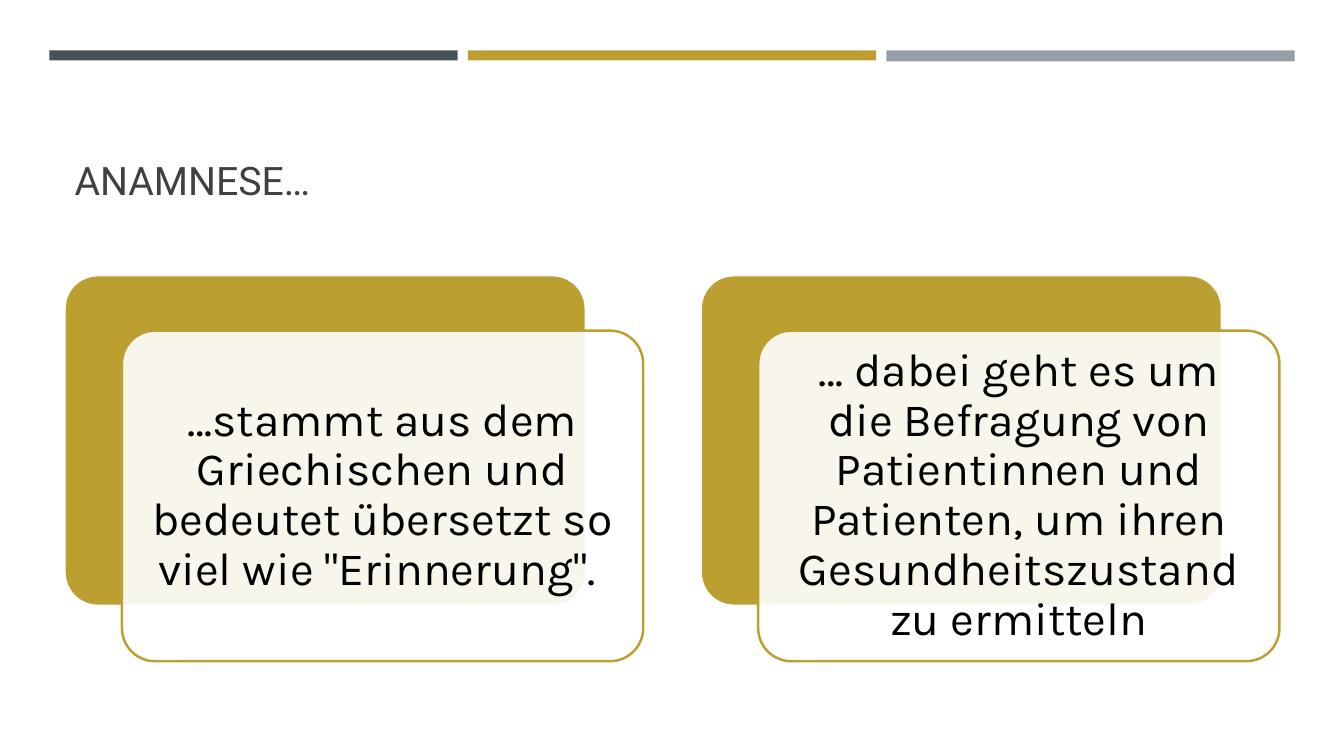
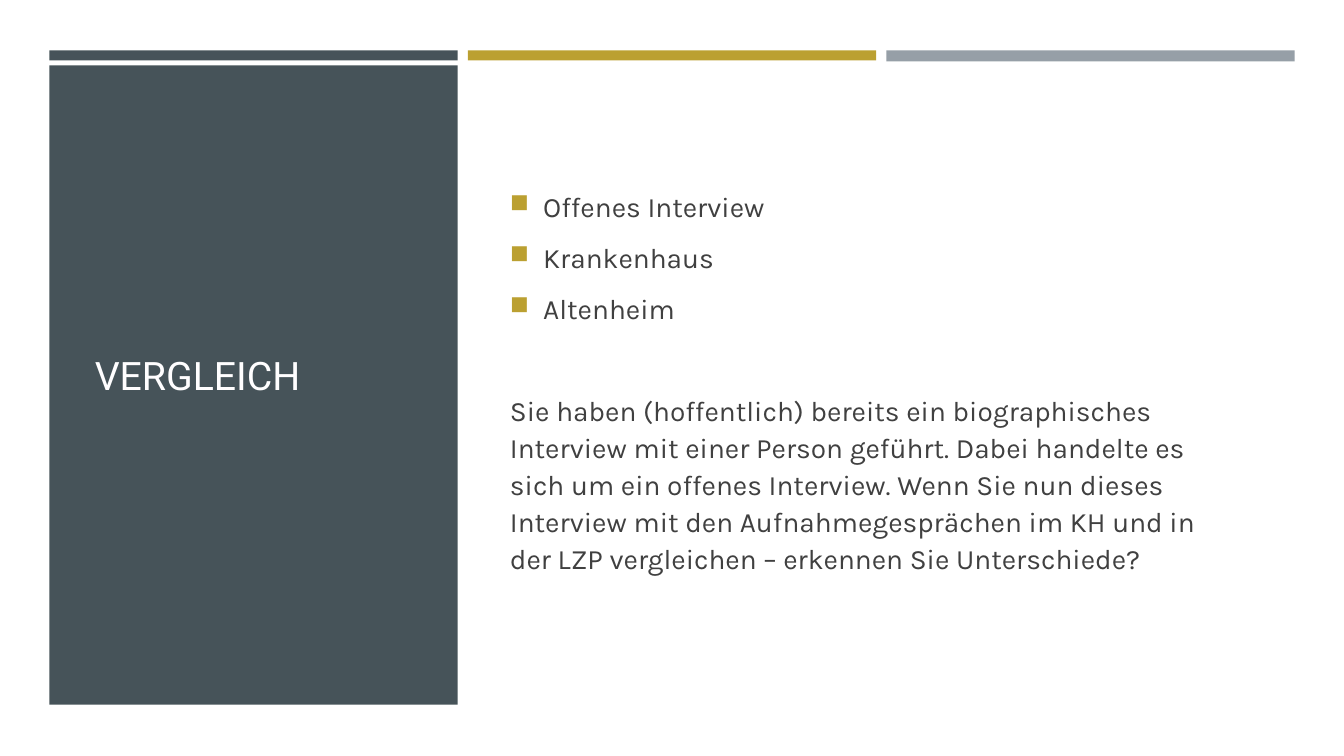
from dataclasses import dataclass

from lxml import etree
from pptx import Presentation
from pptx.dml.color import RGBColor
from pptx.enum.shapes import MSO_SHAPE
from pptx.enum.text import MSO_ANCHOR, MSO_AUTO_SIZE, PP_ALIGN
from pptx.oxml.ns import qn
from pptx.presentation import Presentation as Deck
from pptx.shapes.autoshape import Shape
from pptx.slide import Slide
from pptx.text.text import TextFrame
from pptx.util import Inches, Pt

RECT, ROUNDED = MSO_SHAPE.RECTANGLE, MSO_SHAPE.ROUNDED_RECTANGLE
MIDDLE, BOTTOM = MSO_ANCHOR.MIDDLE, MSO_ANCHOR.BOTTOM
LEFT, CENTER = PP_ALIGN.LEFT, PP_ALIGN.CENTER
NO_AUTOFIT = MSO_AUTO_SIZE.NONE

SLATE, GOLD, GRAY = "465359", "BBA031", "969FA7"
WHITE, OFF_WHITE, BLACK, INK = "FFFFFF", "FFFEFF", "000000", "404040"
HEADING_FONT, BODY_FONT = "Roboto", "Karla"
MARGIN, BAND_TOP, BAND_WIDTH, BAND_PITCH = 0.49, 0.5, 4.05, 4.15
CARD_PITCH = 6.31
TITLE_ONLY = 5


@dataclass(frozen=True)
class Box:
    left: float
    top: float
    width: float
    height: float

    def shifted(self, right: float, down: float = 0) -> "Box":
        return Box(self.left + right, self.top + down, self.width, self.height)

    def lengths(self) -> tuple[Inches, Inches, Inches, Inches]:
        return (Inches(self.left), Inches(self.top),
                Inches(self.width), Inches(self.height))


@dataclass(frozen=True)
class Band:
    color: str
    height: float


BANDS = (Band(SLATE, 0.1), Band(GOLD, 0.1), Band(GRAY, 0.11))
CARD_BACK = Box(0.64, 2.73, 5.17, 3.28)
CARD_TEXTS = (
    "…stammt aus dem Griechischen und bedeutet übersetzt so viel wie \"Erinnerung\". ",
    "… dabei geht es um die Befragung von Patientinnen und Patienten, "
    "um ihren Gesundheitszustand zu ermitteln",
)
SETTINGS = ("Offenes Interview", "Krankenhaus", "Altenheim")
QUESTION = (
    "Sie haben (hoffentlich) bereits ein biographisches Interview mit einer Person "
    "geführt. Dabei handelte es sich um ein offenes Interview. Wenn Sie nun dieses "
    "Interview mit den Aufnahmegesprächen im KH und in der LZP vergleichen – "
    "erkennen Sie Unterschiede?"
)


def rgb(color: str) -> RGBColor:
    return RGBColor.from_string(color)


def add_block(slide: Slide, box: Box, fill: str, *, kind: MSO_SHAPE = RECT,
              line: str | None = None, opacity: int = 100) -> Shape:
    block = slide.shapes.add_shape(kind, *box.lengths())
    block.shadow.inherit = False
    block.fill.solid()
    block.fill.fore_color.rgb = rgb(fill)
    if opacity < 100:
        solid = block.element.spPr.find(qn("a:solidFill"))
        etree.SubElement(solid[0], qn("a:alpha"), val=str(opacity * 1000))
    if line:
        block.line.color.rgb = rgb(line)
        block.line.width = Pt(1.75)
    else:
        block.line.fill.background()
    if kind == ROUNDED:
        block.adjustments[0] = 0.1
    return block


def write(frame: TextFrame, text: str, *, size: float, font: str, color: str,
          align: PP_ALIGN = LEFT, spacing: float = 1, before: float = 0,
          after: float = 0, bullet: bool = False) -> None:
    first = frame.paragraphs[0]
    paragraph = frame.add_paragraph() if first.runs else first
    paragraph.alignment = align
    paragraph.line_spacing = spacing
    paragraph.space_before, paragraph.space_after = Pt(before), Pt(after)
    run = paragraph.add_run()
    run.text = text
    run.font.size, run.font.name = Pt(size), font
    run.font.color.rgb = rgb(color)
    if bullet:
        properties = paragraph.element.get_or_add_pPr() if hasattr(
            paragraph, "element") else paragraph._p.get_or_add_pPr()
        properties.set("marL", str(Inches(0.33)))
        properties.set("indent", str(Inches(-0.33)))
        tint = etree.SubElement(properties, qn("a:buClr"))
        etree.SubElement(tint, qn("a:srgbClr"), val=GOLD)
        etree.SubElement(properties, qn("a:buSzPct"), val="92000")
        etree.SubElement(properties, qn("a:buChar"), char="■")


def prepare_frame(frame: TextFrame, anchor: MSO_ANCHOR) -> TextFrame:
    frame.word_wrap = True
    frame.auto_size = NO_AUTOFIT
    frame.vertical_anchor = anchor
    return frame


def set_title(slide: Slide, text: str, box: Box, color: str,
              anchor: MSO_ANCHOR) -> None:
    title = slide.shapes.title
    title.left, title.top, title.width, title.height = box.lengths()
    write(prepare_frame(title.text_frame, anchor), text, size=28,
          font=HEADING_FONT, color=color)
    slide.shapes.element.append(title.element)


def add_banded_slide(deck: Deck) -> Slide:
    slide = deck.slides.add_slide(deck.slide_layouts[TITLE_ONLY])
    for index, band in enumerate(BANDS):
        left = MARGIN + index * BAND_PITCH
        add_block(slide, Box(left, BAND_TOP, BAND_WIDTH, band.height), band.color)
    return slide


def add_card(slide: Slide, back: Box, text: str) -> None:
    add_block(slide, back, GOLD, kind=ROUNDED, line=WHITE)
    front = add_block(slide, back.shifted(0.57, 0.55), WHITE, kind=ROUNDED,
                      line=GOLD, opacity=90)
    frame = prepare_frame(front.text_frame, MIDDLE)
    frame.margin_left = frame.margin_right = Inches(0.14)
    frame.margin_top = frame.margin_bottom = Inches(0.14)
    write(frame, text, size=33, font=BODY_FONT, color=BLACK,
          align=CENTER, spacing=0.9)


def build_anamnesis(deck: Deck) -> None:
    slide = add_banded_slide(deck)
    set_title(slide, "ANAMNESE…", Box(0.64, 0.77, 12.06, 1.3), INK, BOTTOM)
    for index, text in enumerate(CARD_TEXTS):
        add_card(slide, CARD_BACK.shifted(index * CARD_PITCH), text)


def build_comparison(deck: Deck) -> None:
    slide = add_banded_slide(deck)
    add_block(slide, Box(MARGIN, 0.65, BAND_WIDTH, 6.34), SLATE)
    set_title(slide, "VERGLEICH", Box(0.84, 1.14, 3.34, 5.15), OFF_WHITE, MIDDLE)
    body = slide.shapes.add_textbox(*Box(4.96, 1.14, 7.36, 5.27).lengths())
    frame = prepare_frame(body.text_frame, MIDDLE)
    style = dict(size=20, font=BODY_FONT, color=INK, spacing=1.1, after=6)
    for setting in SETTINGS:
        write(frame, setting, before=4, bullet=True, **style)
    write(frame, QUESTION, before=40.4, **style)


def main() -> None:
    deck = Presentation()
    deck.slide_width, deck.slide_height = Inches(13.33), Inches(7.5)
    build_anamnesis(deck)
    build_comparison(deck)
    deck.save("out.pptx")


if __name__ == "__main__":
    main()
